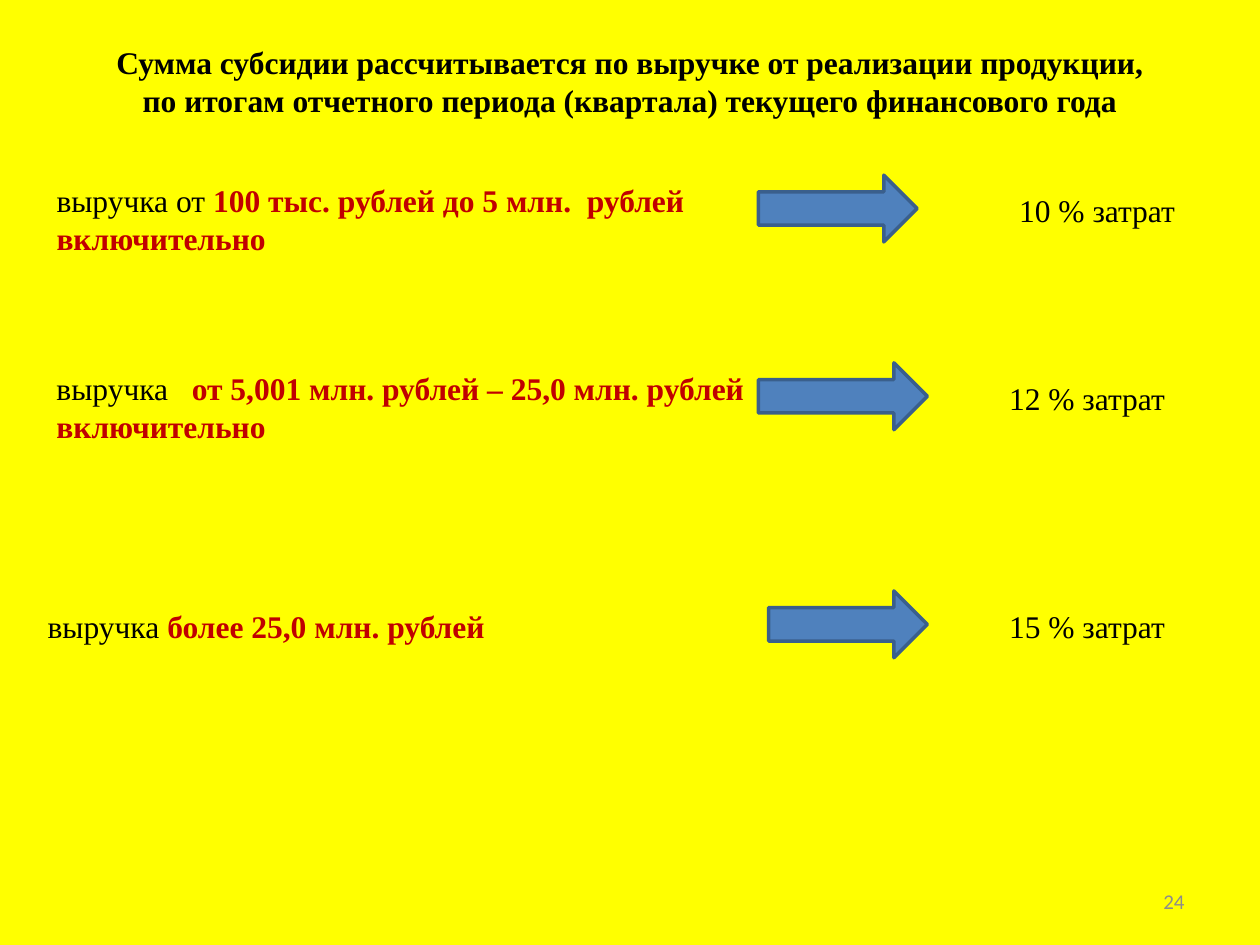
import pptx
import pptx.dml.color
import pptx.enum.shapes
import pptx.enum.text
import pptx.util

RGBColor = pptx.dml.color.RGBColor
Align = pptx.enum.text.PP_ALIGN
Anchor = pptx.enum.text.MSO_ANCHOR

YELLOW = RGBColor(0xFF, 0xFF, 0x00)
BLACK = RGBColor(0x00, 0x00, 0x00)
DARK_RED = RGBColor(0xC0, 0x00, 0x00)
BLUE = RGBColor(0x4F, 0x81, 0xBD)
DARK_BLUE = RGBColor(0x3A, 0x5F, 0x8C)
GREY = RGBColor(0x8C, 0x8C, 0x8C)

WIDTH = pptx.util.Inches(10)
HEIGHT = pptx.util.Inches(7.5)
LINE_HEIGHT = 5.33
ARROW_HEIGHT = 7.07
RATE_DROP = 1.07

TITLE = ("Сумма субсидии рассчитывается по выручке от реализации продукции, "
         "по итогам отчетного периода (квартала) текущего финансового года")

TIERS = [
    dict(top=18.53, lead="выручка от ",
         limit="100 тыс. рублей до 5 млн.  рублей включительно",
         revenue_box=(3.5, 18.53, 52.8, 9.47), arrow_span=(60.2, 12.6),
         rate="10 % затрат", rate_span=(79.9, 15.7)),
    dict(top=38.4, lead="выручка   ",
         limit="от 5,001 млн. рублей – 25,0 млн. рублей включительно",
         revenue_box=(3.5, 38.4, 56.7, 13.47), arrow_span=(60.2, 13.4),
         rate="12 % затрат", rate_span=(79.1, 14.5)),
    dict(top=62.53, lead="выручка ",
         limit="более 25,0 млн. рублей",
         revenue_box=(2.8, 63.6, 55.6, LINE_HEIGHT), arrow_span=(61, 12.6),
         rate="15 % затрат", rate_span=(79.1, 15.9)),
]


def place(left, top, width, height):
    return [round(share * side / 100) for share, side in
            zip((left, top, width, height), (WIDTH, HEIGHT, WIDTH, HEIGHT))]


def add_text(slide, box, text, emphasis="", size=18, font="Times New Roman",
             color=BLACK, bold=False, align=Align.LEFT, anchor=Anchor.TOP):
    frame = slide.shapes.add_textbox(*place(*box)).text_frame
    frame.word_wrap = True
    frame.vertical_anchor = anchor
    paragraph = frame.paragraphs[0]
    paragraph.alignment = align
    for words, ink, weight in ((text, color, bold), (emphasis, DARK_RED, True)):
        if words:
            run = paragraph.add_run()
            run.text = words
            run.font.size = pptx.util.Pt(size)
            run.font.name = font
            run.font.color.rgb = ink
            run.font.bold = weight


def add_arrow(slide, box):
    arrow = slide.shapes.add_shape(
        pptx.enum.shapes.MSO_SHAPE.RIGHT_ARROW, *place(*box))
    arrow.shadow.inherit = False
    arrow.fill.solid()
    arrow.fill.fore_color.rgb = BLUE
    arrow.line.color.rgb = DARK_BLUE
    arrow.line.width = pptx.util.Pt(2)


def add_tier(slide, top, lead, limit, revenue_box, arrow_span, rate, rate_span):
    arrow_left, arrow_width = arrow_span
    rate_left, rate_width = rate_span
    add_text(slide, revenue_box, lead, emphasis=limit)
    add_arrow(slide, (arrow_left, top, arrow_width, ARROW_HEIGHT))
    add_text(slide, (rate_left, top + RATE_DROP, rate_width, LINE_HEIGHT), rate)


def main():
    deck = pptx.Presentation()
    deck.slide_width = WIDTH
    deck.slide_height = HEIGHT
    slide = deck.slides.add_slide(deck.slide_layouts[6])
    slide.background.fill.solid()
    slide.background.fill.fore_color.rgb = YELLOW

    add_text(slide, (7.5, 3.87, 85, 9.47), TITLE, bold=True, align=Align.CENTER)
    for tier in TIERS:
        add_tier(slide, **tier)
    add_text(slide, (71.7, 92.67, 23.3, LINE_HEIGHT), "24", size=12,
             font="Calibri", color=GREY, align=Align.RIGHT, anchor=Anchor.MIDDLE)
    deck.save("out.pptx")


if __name__ == "__main__":
    main()
